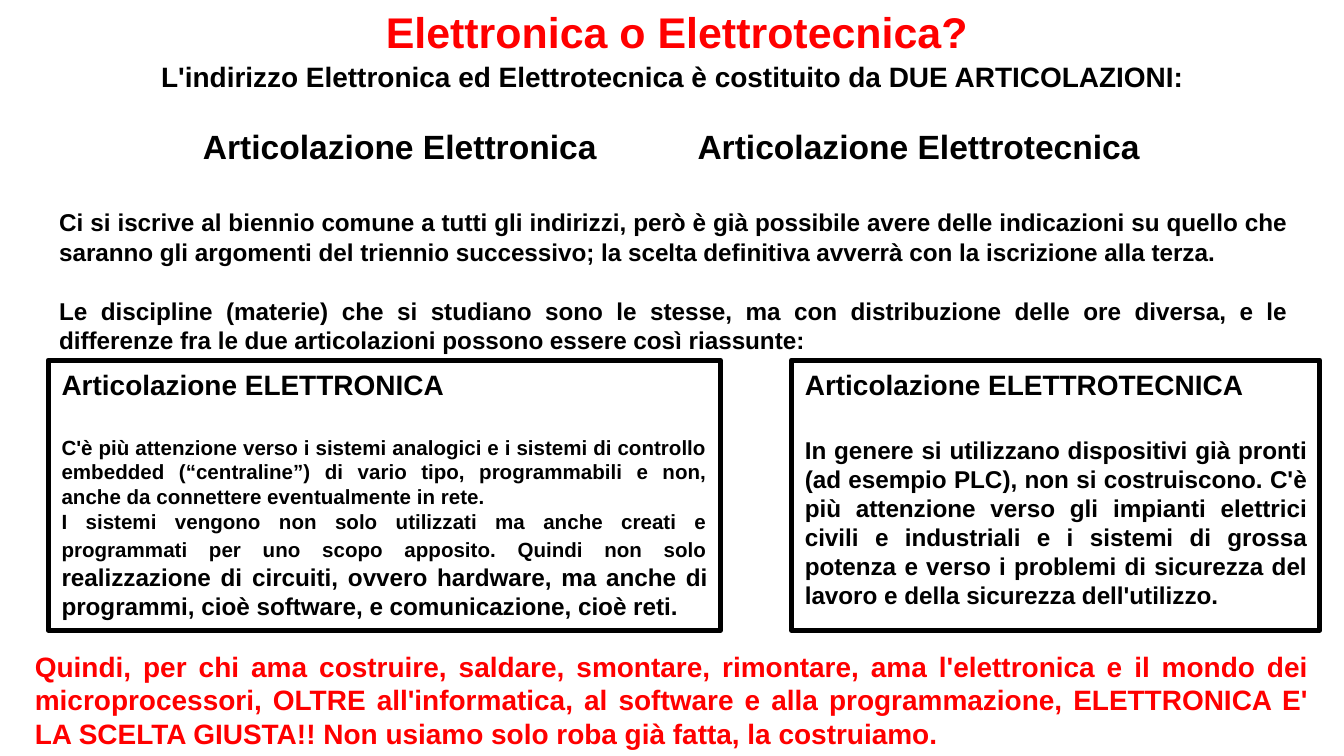
from pptx import Presentation
from pptx.dml.color import RGBColor
from pptx.enum.shapes import MSO_SHAPE
from pptx.enum.text import MSO_ANCHOR, PP_ALIGN
from pptx.oxml.ns import qn
from pptx.util import Emu, Inches, Pt
from lxml import etree

RECTANGLE = MSO_SHAPE.RECTANGLE
TOP, MIDDLE = MSO_ANCHOR.TOP, MSO_ANCHOR.MIDDLE
LEFT, CENTER, JUSTIFY = PP_ALIGN.LEFT, PP_ALIGN.CENTER, PP_ALIGN.JUSTIFY

COLORS = {"black": "000000", "red": "FF0000"}
CELL = Inches(0.1)  # grid columns and rows
COLUMNS, ROWS = 100, 56.25
GAP_HEIGHT = 1.22  # height of a skipped line relative to its font size


def grid(cells):
    return Emu(round(cells * CELL))


def paragraph(*spans, align=JUSTIFY, gap=0, tabs=()):
    """Describe a paragraph: spans are (text, size), gap is the size of a skipped line."""
    return {"spans": spans, "align": align, "gap": gap, "tabs": tabs}


class SlideWriter:
    font_name = "Arial"
    line_width = 2.83

    def __init__(self, deck):
        self.page = deck.slides.add_slide(deck.slide_layouts[6])

    def text(self, area, paragraphs, color="black", inset=(0.8, 0.4), anchor=TOP):
        box = self.page.shapes.add_textbox(*map(grid, area))
        self.fill_text(box, paragraphs, color, inset, anchor)

    def frame(self, area, paragraphs):
        box = self.page.shapes.add_shape(RECTANGLE, *map(grid, area))
        box.shadow.inherit = False
        box.fill.background()
        box.line.color.rgb = RGBColor.from_string(COLORS["black"])
        box.line.width = Pt(self.line_width)
        self.fill_text(box, paragraphs, "black", (1, 0.55), TOP)

    def fill_text(self, box, paragraphs, color, inset, anchor):
        frame = box.text_frame
        across, down = map(grid, inset)
        layout = {
            "word_wrap": True, "vertical_anchor": anchor,
            "margin_left": across, "margin_right": across,
            "margin_top": down, "margin_bottom": down,
        }
        for name, value in layout.items():
            setattr(frame, name, value)
        for index, entry in enumerate(paragraphs):
            para = frame.add_paragraph() if index else frame.paragraphs[0]
            para.alignment = entry["align"]
            para.space_before = Pt(round(entry["gap"] * GAP_HEIGHT))
            self.add_tabs(para, entry["tabs"])
            for text, size in entry["spans"]:
                span = para.add_run()
                span.text = text
                style = {"name": self.font_name, "size": Pt(size), "bold": True}
                for name, value in style.items():
                    setattr(span.font, name, value)
                span.font.color.rgb = RGBColor.from_string(COLORS[color])

    def add_tabs(self, para, stops):
        if stops:
            tab_list = etree.SubElement(para._p.get_or_add_pPr(), qn("a:tabLst"))
            for stop in stops:
                etree.SubElement(tab_list, qn("a:tab"), pos=str(grid(stop)), algn="l")


def main():
    deck = Presentation()
    deck.slide_width, deck.slide_height = grid(COLUMNS), grid(ROWS)
    slide = SlideWriter(deck)

    # Title
    slide.text((5.4, 0.7, 90, 3.3),
               [paragraph(("Elettronica o Elettrotecnica?", 23), align=CENTER)],
               color="red", inset=(0, 0), anchor=MIDDLE)

    # Introduction, with the two branches set on tab stops
    slide.text((3.6, 4, 92.9, 16.4), [
        paragraph(("L'indirizzo Elettronica ed Elettrotecnica è costituito da "
                   "DUE ARTICOLAZIONI:", 15), align=CENTER),
        paragraph(("\tArticolazione Elettronica\tArticolazione Elettrotecnica", 18),
                  align=LEFT, gap=15, tabs=(10.7, 47.5)),
        paragraph(("Ci si iscrive al biennio comune a tutti gli indirizzi, però è già "
                   "possibile avere delle indicazioni su quello che saranno gli argomenti "
                   "del triennio successivo; la scelta definitiva avverrà con la "
                   "iscrizione alla terza.", 13), gap=18),
        paragraph(("Le discipline (materie) che si studiano sono le stesse, ma con "
                   "distribuzione delle ore diversa, e le differenze fra le due "
                   "articolazioni possono essere così riassunte:", 13), gap=13),
    ])

    # Framed comparison of the two branches
    frame_top, frame_height = 26.8, 20.1
    slide.frame((3.6, frame_top, 50, frame_height), [
        paragraph(("Articolazione ELETTRONICA", 15)),
        paragraph(("C'è più attenzione verso i sistemi analogici e i sistemi di controllo "
                   "embedded (“centraline”) di vario tipo, programmabili e non, anche da "
                   "connettere eventualmente in rete.", 11), gap=15),
        paragraph(("I sistemi vengono non solo utilizzati ma anche creati e programmati "
                   "per uno scopo apposito. Quindi non solo", 11),
                  (" realizzazione di circuiti, ovvero hardware, ma anche di programmi, "
                   "cioè software, e comunicazione, cioè reti.", 13)),
    ])
    slide.frame((58.9, frame_top, 39.3, frame_height), [
        paragraph(("Articolazione ELETTROTECNICA", 15), align=LEFT),
        paragraph(("In genere si utilizzano dispositivi già pronti (ad esempio PLC), non "
                   "si costruiscono. C'è più attenzione verso gli impianti elettrici "
                   "civili e industriali e i sistemi di grossa potenza e verso i problemi "
                   "di sicurezza del lavoro e della sicurezza dell'utilizzo.", 13), gap=15),
    ])

    # Conclusion
    slide.text((1.8, 47.9, 96.4, 7), [
        paragraph(("Quindi, per chi ama costruire, saldare, smontare, rimontare, ama "
                   "l'elettronica e il mondo dei microprocessori, OLTRE all'informatica, "
                   "al software e alla programmazione, ELETTRONICA E' LA SCELTA GIUSTA!! "
                   "Non usiamo solo roba già fatta, la costruiamo.", 15)),
    ], color="red")

    deck.save("out.pptx")


if __name__ == "__main__":
    main()
